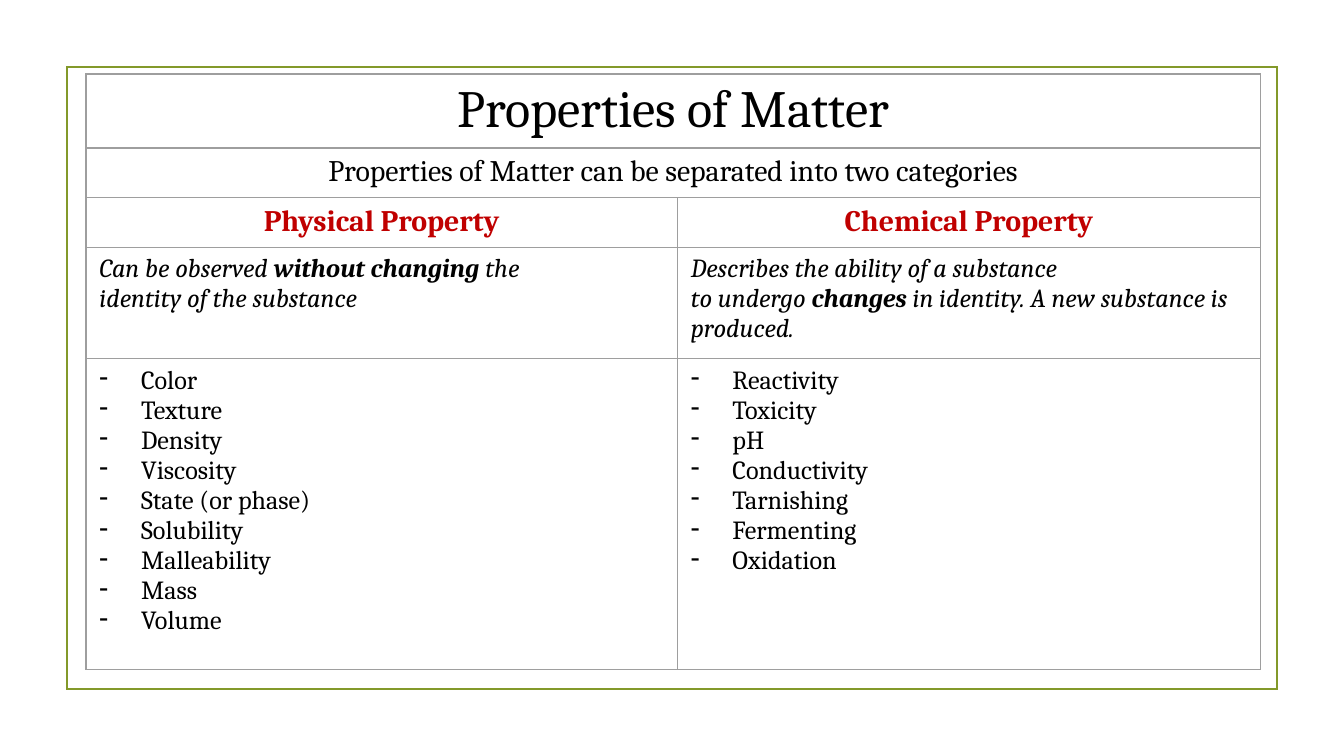
from lxml.etree import SubElement
from pptx import Presentation
from pptx.dml.color import RGBColor
from pptx.enum.shapes import MSO_SHAPE
from pptx.enum.text import PP_ALIGN
from pptx.oxml import parse_xml
from pptx.oxml.ns import nsdecls, qn
from pptx.util import Inches, Pt

BLACK = RGBColor(0x00, 0x00, 0x00)
RED = RGBColor(0xC0, 0x00, 0x00)
OLIVE = RGBColor(0x83, 0x99, 0x2A)
GREY = RGBColor(0x9E, 0x9E, 0x9E)

PAGE_WIDTH = Inches(10)
PAGE_HEIGHT = PAGE_WIDTH * 9 // 16
HARD_SPACE = chr(160)
FONT_NAME = "Cambria"
INDENT = Inches(0.31)
COLUMN_SHARES = [4.4, 4.34]
ROW_SHARES = [0.55, 0.37, 0.37, 0.83, 2.31]

TITLE = {"size": Pt(28)}
SUBTITLE = {"size": Pt(16)}
HEADING = {"size": Pt(16), "bold": True, "color": RED}
ITALIC = {"size": Pt(14), "italic": True}
STRONG = {**ITALIC, "bold": True}
ITEM = {"size": Pt(14)}

HEADINGS = ["Physical Property", "Chemical Property"]
DEFINITIONS = [
    [
        [("Can~be~observed~", ITALIC), ("without~changing", STRONG), ("~the~", ITALIC)],
        [("identity of the~substance", ITALIC)],
    ],
    [
        [
            ("Describes the ability~of a substance to~undergo~", ITALIC),
            ("changes", STRONG),
            ("~in identity. A new~substance~is produced.", ITALIC),
        ]
    ],
]
EXAMPLES = [
    ["Color", "Texture", "Density", "Viscosity", "State~(or phase)",
     "Solubility", "Malleability", "Mass~", "Volume"],
    ["Reactivity", "Toxicity", "pH~", "Conductivity", "Tarnishing",
     "Fermenting", "Oxidation"],
]


def add_bullet(para):
    properties = para._p.get_or_add_pPr()
    properties.set("marL", str(INDENT))
    properties.set("indent", str(-INDENT))
    color = SubElement(properties, qn("a:buClr"))
    SubElement(color, qn("a:srgbClr"), val=str(BLACK))
    SubElement(properties, qn("a:buChar"), char="-")


def write_cell(cell, paragraphs, alignment=PP_ALIGN.LEFT, bulleted=False):
    frame = cell.text_frame
    for index, spans in enumerate(paragraphs):
        para = frame.add_paragraph() if index else frame.paragraphs[0]
        para.alignment = alignment
        if bulleted:
            add_bullet(para)
        for text, formats in spans:
            span = para.add_run()
            span.text = text.replace("~", HARD_SPACE)
            values = {"name": FONT_NAME, "bold": False, "italic": False, **formats}
            span.font.color.rgb = values.pop("color", BLACK)
            for name, value in values.items():
                setattr(span.font, name, value)


def style_cell(cell):
    cell.fill.background()
    properties = cell._tc.get_or_add_tcPr()
    for position, side in enumerate("LRTB"):
        border = parse_xml(
            f'<a:ln{side} {nsdecls("a")} w="{Pt(0.75)}"><a:solidFill>'
            f'<a:srgbClr val="{GREY}"/></a:solidFill></a:ln{side}>'
        )
        properties.insert(position, border)


def add_frame(page, left, top, width, height):
    frame = page.shapes.add_shape(MSO_SHAPE.RECTANGLE, left, top, width, height)
    frame.shadow.inherit = False
    frame.fill.background()
    frame.line.color.rgb = OLIVE
    frame.line.width = Pt(1.25)
    SubElement(frame.line._get_or_add_ln(), qn("a:miter"), lim="800000")


def add_property_table(page, left, top, width, height):
    table = page.shapes.add_table(
        len(ROW_SHARES), len(COLUMN_SHARES), left, top, width, height
    ).table
    table.first_row = table.horz_banding = False
    for column, share in zip(table.columns, COLUMN_SHARES):
        column.width = int(width * share / sum(COLUMN_SHARES))
    for row, share in zip(table.rows, ROW_SHARES):
        row.height = int(height * share / sum(ROW_SHARES))
        for cell in row.cells:
            style_cell(cell)

    banners = [
        ("Properties of Matter", TITLE),
        ("Properties of Matter can be separated into~two~categories", SUBTITLE),
    ]
    for row, banner in enumerate(banners):
        table.cell(row, 0).merge(table.cell(row, 1))
        write_cell(table.cell(row, 0), [[banner]], PP_ALIGN.CENTER)

    for column, (heading, definition, examples) in enumerate(
        zip(HEADINGS, DEFINITIONS, EXAMPLES)
    ):
        write_cell(table.cell(2, column), [[(heading, HEADING)]], PP_ALIGN.CENTER)
        write_cell(table.cell(3, column), definition)
        items = [[(example, ITEM)] for example in examples]
        write_cell(table.cell(4, column), items, bulleted=True)


def build_deck():
    deck = Presentation()
    deck.slide_width, deck.slide_height = PAGE_WIDTH, PAGE_HEIGHT
    page = deck.slides.add_slide(deck.slide_layouts[6])
    margin = int(PAGE_WIDTH * 0.05)
    add_frame(page, margin, margin, PAGE_WIDTH - 2 * margin, PAGE_HEIGHT - 2 * margin)
    add_property_table(
        page,
        int(PAGE_WIDTH * 0.064),
        int(PAGE_HEIGHT * 0.098),
        Inches(sum(COLUMN_SHARES)),
        Inches(sum(ROW_SHARES)),
    )
    deck.save("out.pptx")


if __name__ == "__main__":
    build_deck()
